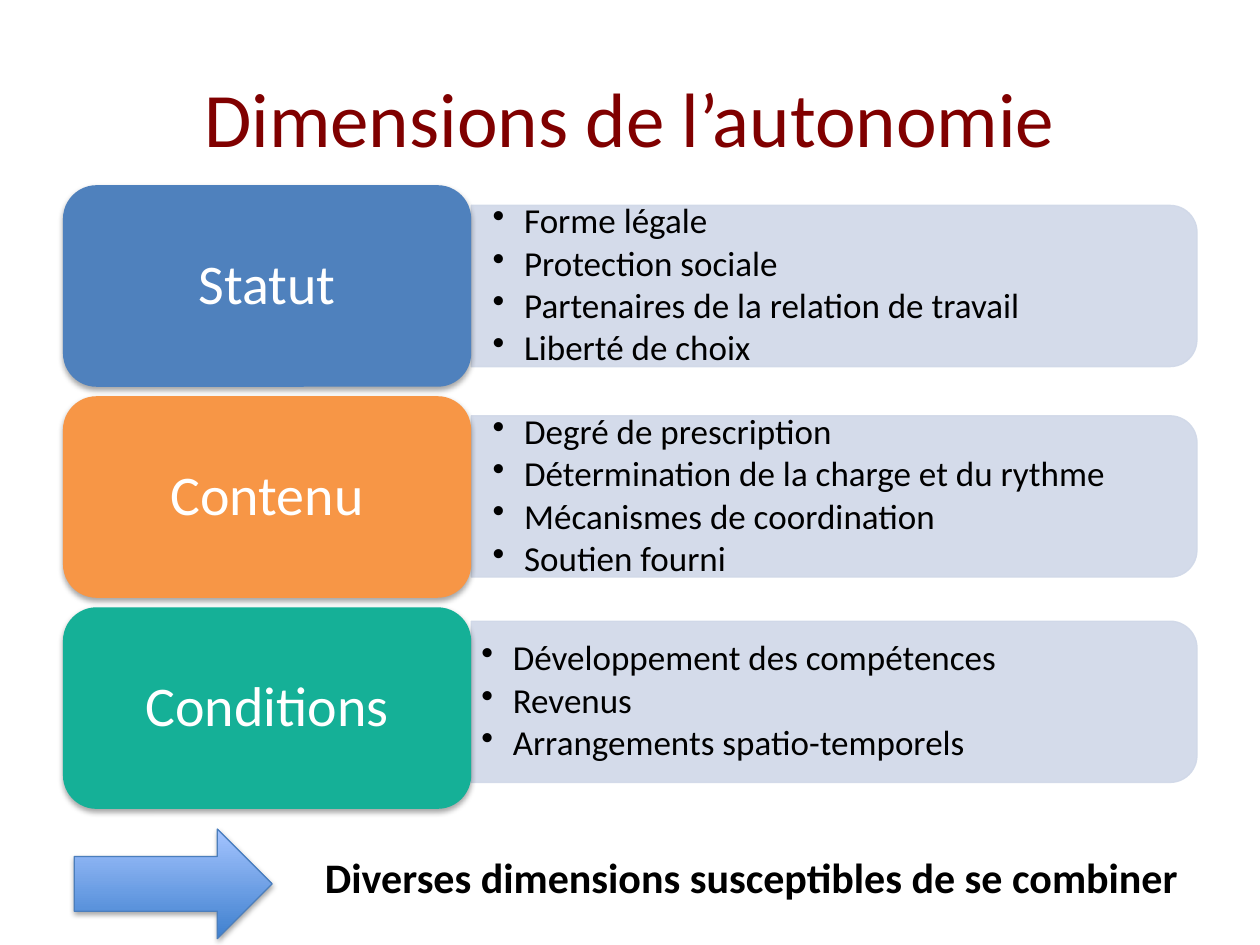
from lxml import etree
from pptx import Presentation
from pptx.dml.color import RGBColor
from pptx.enum.shapes import MSO_SHAPE
from pptx.enum.text import MSO_ANCHOR, PP_ALIGN
from pptx.oxml.ns import qn
from pptx.util import Inches, Pt

CARD = MSO_SHAPE.ROUNDED_RECTANGLE
PANEL = MSO_SHAPE.ROUND_2_SAME_RECTANGLE
ARROW = MSO_SHAPE.RIGHT_ARROW
MIDDLE, CENTER, LEFT = MSO_ANCHOR.MIDDLE, PP_ALIGN.CENTER, PP_ALIGN.LEFT

MAROON = RGBColor(0x80, 0x00, 0x00)
BLACK = RGBColor(0x00, 0x00, 0x00)
WHITE = RGBColor(0xFF, 0xFF, 0xFF)
PALE_BLUE = RGBColor(0xD0, 0xD8, 0xE8)
BLUE = RGBColor(0x4F, 0x81, 0xBD)
ORANGE = RGBColor(0xF7, 0x96, 0x46)
GREEN = RGBColor(0x15, 0xB0, 0x97)
ARROW_DARK = RGBColor(0x3F, 0x80, 0xCE)
ARROW_LIGHT = RGBColor(0xA4, 0xC4, 0xFF)
ARROW_LINE = RGBColor(0x4B, 0x7E, 0xBC)

# Content: heading, card colour, panel centre, panel inset, points
TITLE = "Dimensions de l’autonomie"
CONCLUSION = "Diverses dimensions susceptibles de se combiner"
DIMENSIONS = [
    ("Statut", BLUE, 2.27, 0.17,
     ["Forme légale", "Protection sociale",
      "Partenaires de la relation de travail", "Liberté de choix"]),
    ("Contenu", ORANGE, 3.94, 0.17,
     ["Degré de prescription", "Détermination de la charge et du rythme",
      "Mécanismes de coordination", "Soutien fourni"]),
    ("Conditions", GREEN, 5.57, 0.08,
     ["Développement des compétences", "Revenus",
      "Arrangements spatio-temporels"]),
]

# Layout in inches
CARD_LEFT, CARD_TOP, CARD_WIDTH, CARD_HEIGHT = 0.5, 1.47, 3.24, 1.6
CARD_STEP = 1.675
PANEL_LEFT, PANEL_WIDTH, PANEL_HEIGHT = CARD_LEFT + CARD_WIDTH, 5.76, 1.28
POINTS_WIDTH, POINTS_HEIGHT = 5.7, 1.15


def box(left, top, width, height):
    return [Inches(value) for value in (left, top, width, height)]


def add_plain_shape(shapes, kind, *place):
    shape = shapes.add_shape(kind, *box(*place))
    shape.shadow.inherit = False
    return shape


def add_shadow(shape):
    effects = shape._element.spPr.find(qn("a:effectLst"))
    shadow = etree.SubElement(effects, qn("a:outerShdw"), blurRad="40000",
                              dist="23000", dir="5400000", rotWithShape="0")
    color = etree.SubElement(shadow, qn("a:srgbClr"), val="000000")
    etree.SubElement(color, qn("a:alpha"), val="35000")


def set_margins(frame, side, end):
    frame.word_wrap = True
    frame.margin_left = frame.margin_right = Inches(side)
    frame.margin_top = frame.margin_bottom = Inches(end)


def write(paragraph, text, size, color, alignment=LEFT, **extra):
    paragraph.alignment = alignment
    run = paragraph.add_run()
    run.text = text
    formats = {"name": "Calibri", "size": Pt(size), **extra}
    for name, value in formats.items():
        setattr(run.font, name, value)
    run.font.color.rgb = color


def set_indent(paragraph, margin, first_line=0, bullet=None):
    properties = paragraph._p.get_or_add_pPr()
    properties.set("marL", str(Inches(margin)))
    properties.set("indent", str(Inches(first_line)))
    if bullet:
        etree.SubElement(properties, qn("a:buChar"), char=bullet)


def add_panel(shapes, center):
    # Turned a quarter so that the rounded corners are on the right
    panel = add_plain_shape(
        shapes, PANEL, PANEL_LEFT + (PANEL_WIDTH - PANEL_HEIGHT) / 2,
        center - PANEL_WIDTH / 2, PANEL_HEIGHT, PANEL_WIDTH)
    panel.rotation = 90
    panel.fill.solid()
    panel.line.width = Pt(0.75)
    for fill in (panel.fill, panel.line.fill):
        fill.solid()
        fill.fore_color.rgb = PALE_BLUE
    for color in panel._element.spPr.iter(qn("a:srgbClr")):
        etree.SubElement(color, qn("a:alpha"), val="90000")


def add_points(shapes, center, inset, points):
    frame = shapes.add_textbox(*box(
        PANEL_LEFT, center - POINTS_HEIGHT / 2,
        POINTS_WIDTH, POINTS_HEIGHT)).text_frame
    set_margins(frame, inset, inset / 2)
    frame.vertical_anchor = MIDDLE
    for index, point in enumerate(points):
        paragraph = frame.add_paragraph() if index else frame.paragraphs[0]
        paragraph.level = 1
        paragraph.line_spacing = 0.9
        paragraph.space_after = Pt(2.6)
        set_indent(paragraph, 0.25, -0.25, "•")
        write(paragraph, point, 20, BLACK)


def add_card(shapes, top, heading, color):
    card = add_plain_shape(shapes, CARD, CARD_LEFT, top, CARD_WIDTH, CARD_HEIGHT)
    card.fill.solid()
    card.fill.fore_color.rgb = color
    card.line.fill.background()
    add_shadow(card)
    set_margins(card.text_frame, 0.13, 0.07)
    card.text_frame.vertical_anchor = MIDDLE
    paragraph = card.text_frame.paragraphs[0]
    paragraph.line_spacing = 0.9
    write(paragraph, heading, 32, WHITE, CENTER)


def add_arrow(shapes):
    arrow = add_plain_shape(shapes, ARROW, 0.59, 6.58, 1.57, 0.87)
    arrow.fill.gradient()
    arrow.fill.gradient_angle = 90
    stops = zip(arrow.fill.gradient_stops, (ARROW_DARK, ARROW_LIGHT), (0, 1))
    for stop, color, position in stops:
        stop.color.rgb = color
        stop.position = position
    arrow.line.color.rgb = ARROW_LINE
    arrow.line.width = Pt(0.75)
    add_shadow(arrow)


def main():
    presentation = Presentation()
    presentation.slide_width, presentation.slide_height = Inches(10), Inches(7.5)
    slide = presentation.slides.add_slide(presentation.slide_layouts[5])
    shapes = slide.shapes

    # Title
    title = shapes.title
    title.left, title.top, title.width, title.height = box(0.5, 0.3, 9, 1.25)
    title.text_frame.vertical_anchor = MIDDLE
    write(title.text_frame.paragraphs[0], TITLE, 44, MAROON, CENTER)

    # Dimensions
    for row, (heading, color, center, inset, points) in enumerate(DIMENSIONS):
        add_panel(shapes, center)
        add_points(shapes, center, inset, points)
        add_card(shapes, CARD_TOP + row * CARD_STEP, heading, color)

    # Conclusion
    add_arrow(shapes)
    frame = shapes.add_textbox(*box(1.54, 6.71, 8.15, 0.5)).text_frame
    frame.word_wrap = True
    paragraph = frame.paragraphs[0]
    paragraph.level = 2
    set_indent(paragraph, 0.94)
    write(paragraph, CONCLUSION, 24, BLACK, bold=True)

    presentation.save("out.pptx")


if __name__ == "__main__":
    main()
